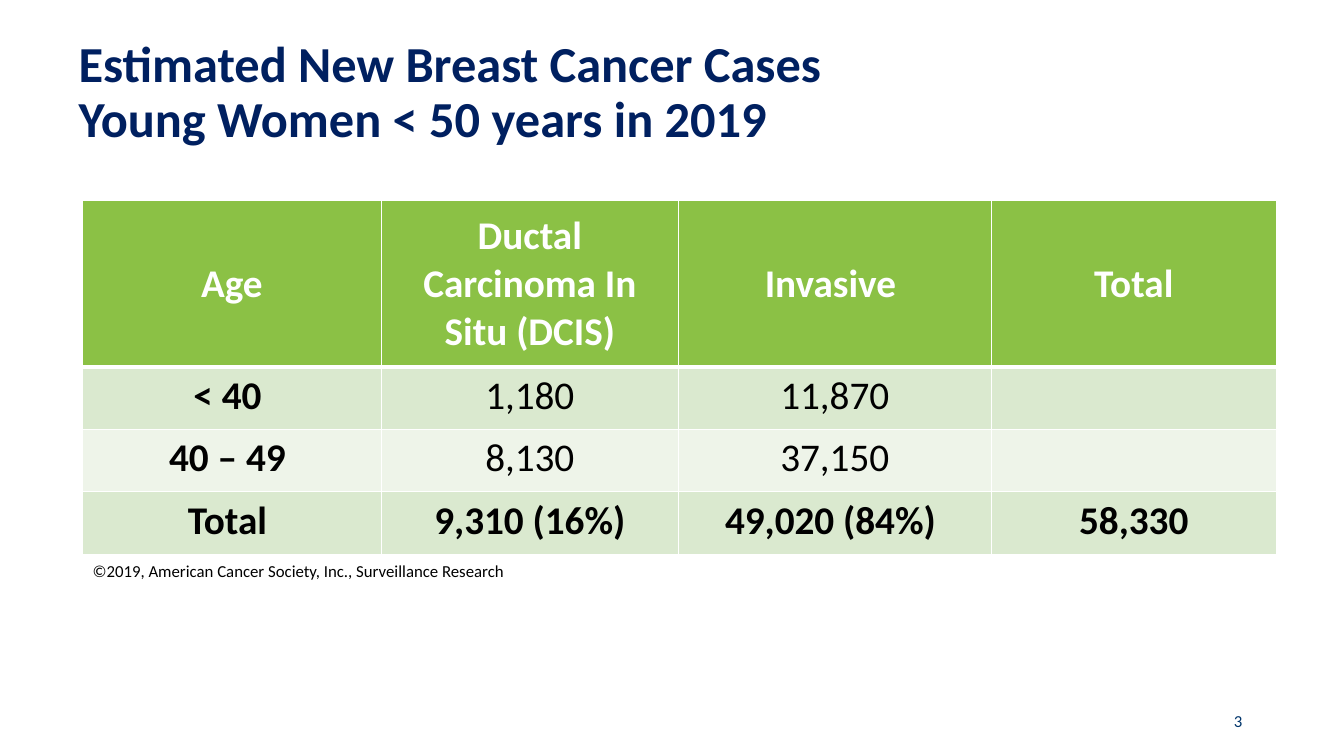
from lxml import etree
from pptx import Presentation
from pptx import util as u
from pptx.dml import color
from pptx.enum import text
from pptx.oxml import ns

COLORS = {
    "title": "002060", "number": "00356B", "header": "8BC145", "odd": "DAE9CF",
    "even": "EEF4E9", "white": "FFFFFF", "black": "000000",
}
COLUMN_WIDTHS = [2.96, 2.95, 3.1, 2.83]
ROW_HEIGHTS = [1.65, 0.62, 0.62, 0.62]
CASES = [
    ["Age", "Ductal Carcinoma In Situ (DCIS)", "Invasive ", "Total"],
    ["< 40 ", "1,180", "11,870", ""],
    ["40 – 49 ", "8,130", "37,150", ""],
    ["Total ", "9,310 (16%)", "49,020 (84%) ", "58,330"],
]


def write_text(frame, words, size, color_name, bold=False, **paragraph_format):
    """Put one formatted paragraph into a text frame."""
    paragraph = frame.paragraphs[0]
    paragraph.text = words
    for name, value in paragraph_format.items():
        setattr(paragraph, name, value)
    font_format = {"name": "Calibri", "size": u.Pt(size), "bold": bold}
    for name, value in font_format.items():
        setattr(paragraph.font, name, value)
    paragraph.font.color.rgb = color.RGBColor.from_string(COLORS[color_name])


def place_title(slide, left, top, width, height):
    """Fill the title placeholder."""
    title = slide.shapes.title
    box = {"left": left, "top": top, "width": width, "height": height}
    for name, value in box.items():
        setattr(title, name, u.Inches(value))
    frame = title.text_frame
    frame.auto_size = text.MSO_AUTO_SIZE.NONE
    frame.vertical_anchor = text.MSO_ANCHOR.MIDDLE
    write_text(frame, "Estimated New Breast Cancer Cases \vYoung Women < 50 years in 2019",
               36, "title", True, alignment=text.PP_ALIGN.LEFT, line_spacing=0.9)


def add_label(slide, left, top, width, height, words, color_name, alignment, anchor):
    """Add a small line of text."""
    box = slide.shapes.add_textbox(*map(u.Inches, (left, top, width, height)))
    box.text_frame.word_wrap = True
    box.text_frame.vertical_anchor = anchor
    write_text(box.text_frame, words, 12, color_name, alignment=alignment)


def set_borders(cell, bottom_width):
    """Draw white lines around a table cell."""
    properties = cell._tc.get_or_add_tcPr()
    for side, width in {"L": 1, "R": 1, "T": 1, "B": bottom_width}.items():
        line = etree.SubElement(properties, ns.qn(f"a:ln{side}"), w=str(u.Pt(width)))
        fill = etree.SubElement(line, ns.qn("a:solidFill"))
        etree.SubElement(fill, ns.qn("a:srgbClr"), val=COLORS["white"])


def add_cases_table(slide, left, top):
    """Add the table of cases by age and type."""
    box = map(u.Inches, (left, top, sum(COLUMN_WIDTHS), sum(ROW_HEIGHTS)))
    table = slide.shapes.add_table(len(CASES), len(COLUMN_WIDTHS), *box).table
    for column, width in zip(table.columns, COLUMN_WIDTHS):
        column.width = u.Inches(width)
    for row, height in zip(table.rows, ROW_HEIGHTS):
        row.height = u.Inches(height)
    last = len(CASES) - 1
    for i, values in enumerate(CASES):
        header = i == 0
        fill_name = "header" if header else "odd" if i % 2 else "even"
        for j, words in enumerate(values):
            cell = table.cell(i, j)
            set_borders(cell, 3 if header else 1)
            cell.fill.solid()
            cell.fill.fore_color.rgb = color.RGBColor.from_string(COLORS[fill_name])
            cell.vertical_anchor = text.MSO_ANCHOR.MIDDLE if header else text.MSO_ANCHOR.TOP
            write_text(cell.text_frame, words, 28, "white" if header else "black",
                       i in (0, last) or j == 0, alignment=text.PP_ALIGN.CENTER)


def main():
    """Build and save the slide."""
    presentation = Presentation()
    presentation.slide_width = u.Inches(13.33)
    presentation.slide_height = u.Inches(7.5)
    slide = presentation.slides.add_slide(presentation.slide_layouts[5])
    place_title(slide, 0.68, 0.42, 11.84, 1.02)
    add_label(slide, 9.42, 6.95, 3, 0.4, "3", "number",
              text.PP_ALIGN.RIGHT, text.MSO_ANCHOR.MIDDLE)
    add_cases_table(slide, 0.82, 1.99)
    add_label(slide, 0.82, 5.51, 7.5, 0.3,
              "©2019, American Cancer Society, Inc., Surveillance Research", "black",
              text.PP_ALIGN.LEFT, text.MSO_ANCHOR.TOP)
    presentation.save("out.pptx")


if __name__ == "__main__":
    main()
